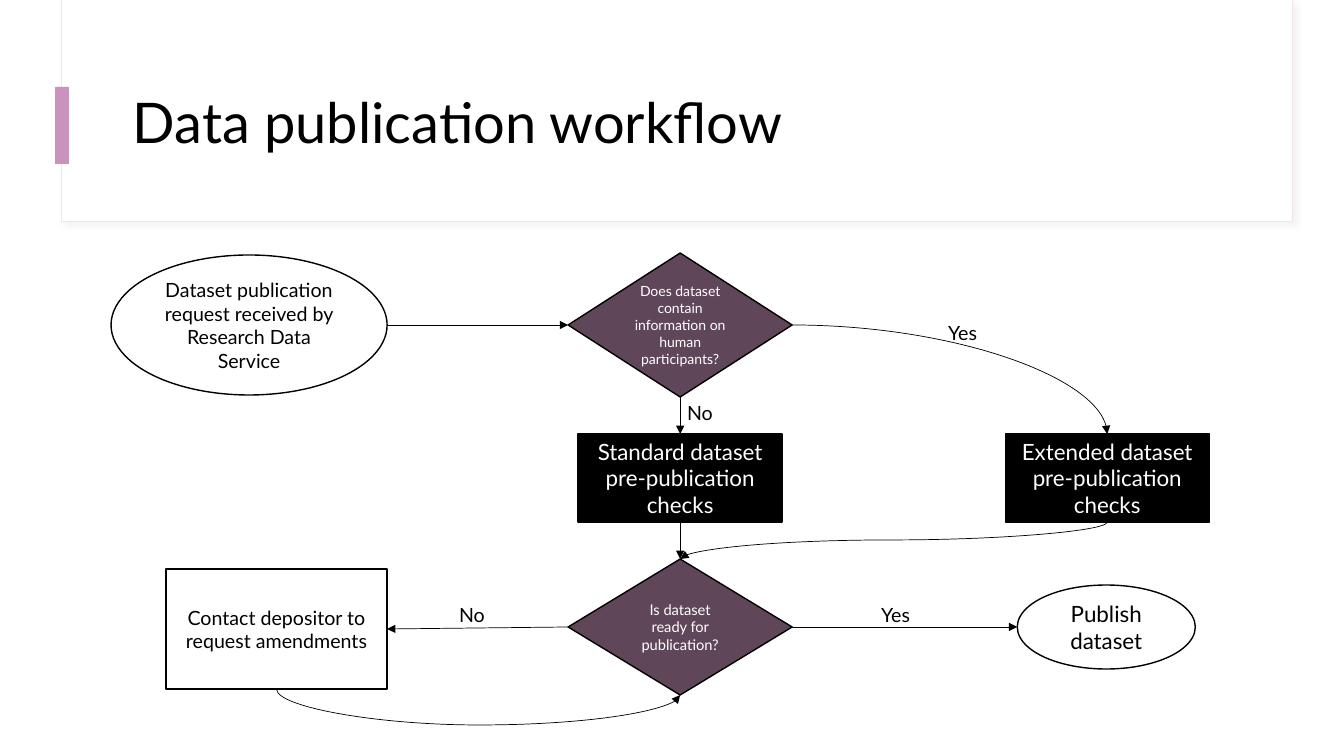
"""Build the data publication workflow slide."""
from dataclasses import dataclass

from lxml.etree import SubElement
from pptx import Presentation
from pptx.dml.color import RGBColor
from pptx.enum.shapes import MSO_CONNECTOR, MSO_SHAPE
from pptx.enum.text import MSO_ANCHOR, MSO_AUTO_SIZE, PP_ALIGN
from pptx.oxml.ns import qn
from pptx.util import Inches, Pt


@dataclass(frozen=True)
class Theme:
    font: str = "Lato"
    black: str = "000000"
    white: str = "FFFFFF"
    plum: str = "5F4658"
    accent: str = "CA92BD"
    frame: str = "F0E5EE"
    shadow: str = "D9D9D9"
    title: float = 40
    large: float = 16
    body: float = 14
    question: float = 10.5
    small: float = 10
    outline: float = 1
    frame_line: float = 0.75
    link_line: float = 0.5


THEME = Theme()
EMU_PER_PX = 914400 / 100.8
TOP, LEFT, BOTTOM, RIGHT = range(4)
OVAL, DIAMOND, BOX = MSO_SHAPE.OVAL, MSO_SHAPE.DIAMOND, MSO_SHAPE.RECTANGLE

TITLE = ("Data publication workflow", (123, 60, 1121, 130))
HEADER_FRAME = (62, 0, 1230, 222)
ACCENT_BAR = (55, 87, 14, 77)

NODES = {
    "request": (OVAL, (111, 255, 276, 140), THEME.white, THEME.black, THEME.body,
                "Dataset publication request received by Research Data Service"),
    "human": (DIAMOND, (568, 253, 224, 144), THEME.plum, THEME.white, THEME.small,
              "Does dataset contain information on human participants?"),
    "standard": (BOX, (578, 434, 204, 88), THEME.black, THEME.white, THEME.large,
                 "Standard dataset pre-publication checks"),
    "extended": (BOX, (1005, 434, 204, 88), THEME.black, THEME.white, THEME.large,
                 "Extended dataset pre-publication checks"),
    "ready": (DIAMOND, (568, 559, 224, 136), THEME.plum, THEME.white, THEME.question,
              "Is dataset ready for publication?"),
    "contact": (BOX, (166, 569, 221, 120), THEME.white, THEME.black, THEME.body,
                "Contact depositor to request amendments"),
    "publish": (OVAL, (1017, 585, 178, 84), THEME.white, THEME.black, THEME.large,
                "Publish dataset"),
}
STRAIGHT_LINKS = [
    ("request", RIGHT, "human", LEFT),
    ("human", BOTTOM, "standard", TOP),
    ("standard", BOTTOM, "ready", TOP),
    ("ready", RIGHT, "publish", LEFT),
    ("ready", LEFT, "contact", RIGHT),
]
CORNER_LINK = ("human", RIGHT, "extended", TOP)
BENT_LINKS = [
    (("contact", BOTTOM, "ready", BOTTOM), 36),
    (("extended", BOTTOM, "ready", TOP), 18),
]
LABELS = [
    ("Yes", (938, 316, 69, 30)),
    ("No", (677, 396, 58, 30)),
    ("Yes", (871, 598, 67, 30)),
    ("No", (449, 598, 59, 30)),
]


def px(length):
    return round(length * EMU_PER_PX)


def color(value):
    return RGBColor.from_string(value)


def style_text(shape, text, size, text_color, align=PP_ALIGN.LEFT, anchor=MSO_ANCHOR.MIDDLE):
    frame = shape.text_frame
    frame.word_wrap = True
    frame.vertical_anchor = anchor
    frame.text = text
    paragraph = frame.paragraphs[0]
    paragraph.alignment = align
    font = paragraph.runs[0].font
    font.name, font.size = THEME.font, Pt(size)
    font.color.rgb = color(text_color)
    return frame


def add_block(slide, kind, box, fill, line=None, weight=THEME.outline):
    shape = slide.shapes.add_shape(kind, *map(px, box))
    shape.shadow.inherit = False
    shape.fill.solid()
    shape.fill.fore_color.rgb = color(fill)
    if line:
        shape.line.color.rgb = color(line)
        shape.line.width = Pt(weight)
    else:
        shape.line.fill.background()
    return shape


def add_header(slide):
    panel = add_block(slide, BOX, HEADER_FRAME, THEME.white, THEME.frame, THEME.frame_line)
    effects = panel.element.spPr.find(qn("a:effectLst"))
    shadow = SubElement(effects, qn("a:outerShdw"), blurRad=str(Pt(4)), dist=str(Pt(3)),
                        dir="2700000", algn="tl", rotWithShape="0")
    tint = SubElement(shadow, qn("a:srgbClr"), val=THEME.shadow)
    SubElement(tint, qn("a:alpha"), val="30000")
    add_block(slide, BOX, ACCENT_BAR, THEME.accent)
    text, box = TITLE
    title = slide.shapes.add_textbox(*map(px, box))
    style_text(title, text, THEME.title, THEME.black).paragraphs[0].line_spacing = 0.9


def add_node(slide, kind, box, fill, text_color, size, text):
    node = add_block(slide, kind, box, fill, THEME.black)
    style_text(node, text, size, text_color, PP_ALIGN.CENTER)
    return node


def side_middle(name, side):
    left, top, width, height = NODES[name][1]
    across, down = ((0.5, 0), (0, 0.5), (0.5, 1), (1, 0.5))[side]
    return left + across * width, top + down * height


def add_link(slide, nodes, link, kind=MSO_CONNECTOR.STRAIGHT):
    start, start_side, end, end_side = link
    points = side_middle(start, start_side) + side_middle(end, end_side)
    connector = slide.shapes.add_connector(kind, *map(px, points))
    if NODES[start][0] != OVAL:
        connector.begin_connect(nodes[start], start_side)
    if NODES[end][0] != OVAL:
        connector.end_connect(nodes[end], end_side)
    connector.line.color.rgb = color(THEME.black)
    connector.line.width = Pt(THEME.link_line)
    properties = connector.element.spPr
    SubElement(properties.find(qn("a:ln")), qn("a:tailEnd"), type="triangle")
    SubElement(properties, qn("a:effectLst"))
    return connector


def add_bent_link(slide, nodes, link, drop):
    connector = add_link(slide, nodes, link, MSO_CONNECTOR.CURVE)
    start_x, start_y = side_middle(*link[:2])
    end_x, end_y = side_middle(*link[2:])
    width, height = abs(end_y - start_y), abs(end_x - start_x)
    connector.left = px((start_x + end_x - width) / 2)
    connector.top = px((start_y + end_y - height) / 2)
    connector.width, connector.height = px(width), px(height)
    rightward = end_x > start_x
    transform = connector.element.spPr.find(qn("a:xfrm"))
    transform.set("rot", str((270 if rightward else 90) * 60000))
    transform.set("flipH", "1" if rightward else "0")
    transform.set("flipV", "0")
    geometry = connector.element.spPr.find(qn("a:prstGeom"))
    SubElement(geometry.find(qn("a:avLst")), qn("a:gd"), name="adj1",
               fmla=f"val {round(drop / width * 100000)}")


def main():
    presentation = Presentation()
    presentation.slide_width, presentation.slide_height = Inches(13.33), Inches(7.5)
    slide = presentation.slides.add_slide(presentation.slide_layouts[6])
    add_header(slide)
    nodes = {name: add_node(slide, *node) for name, node in NODES.items()}
    for link in STRAIGHT_LINKS:
        add_link(slide, nodes, link)
    corner = add_link(slide, nodes, CORNER_LINK, MSO_CONNECTOR.CURVE)
    corner.element.spPr.find(qn("a:prstGeom")).set("prst", "curvedConnector2")
    for link, drop in BENT_LINKS:
        add_bent_link(slide, nodes, link, drop)
    for text, box in LABELS:
        label = slide.shapes.add_textbox(*map(px, box))
        frame = style_text(label, text, THEME.body, THEME.black, anchor=MSO_ANCHOR.TOP)
        frame.auto_size = MSO_AUTO_SIZE.SHAPE_TO_FIT_TEXT
    presentation.save("out.pptx")


if __name__ == "__main__":
    main()
